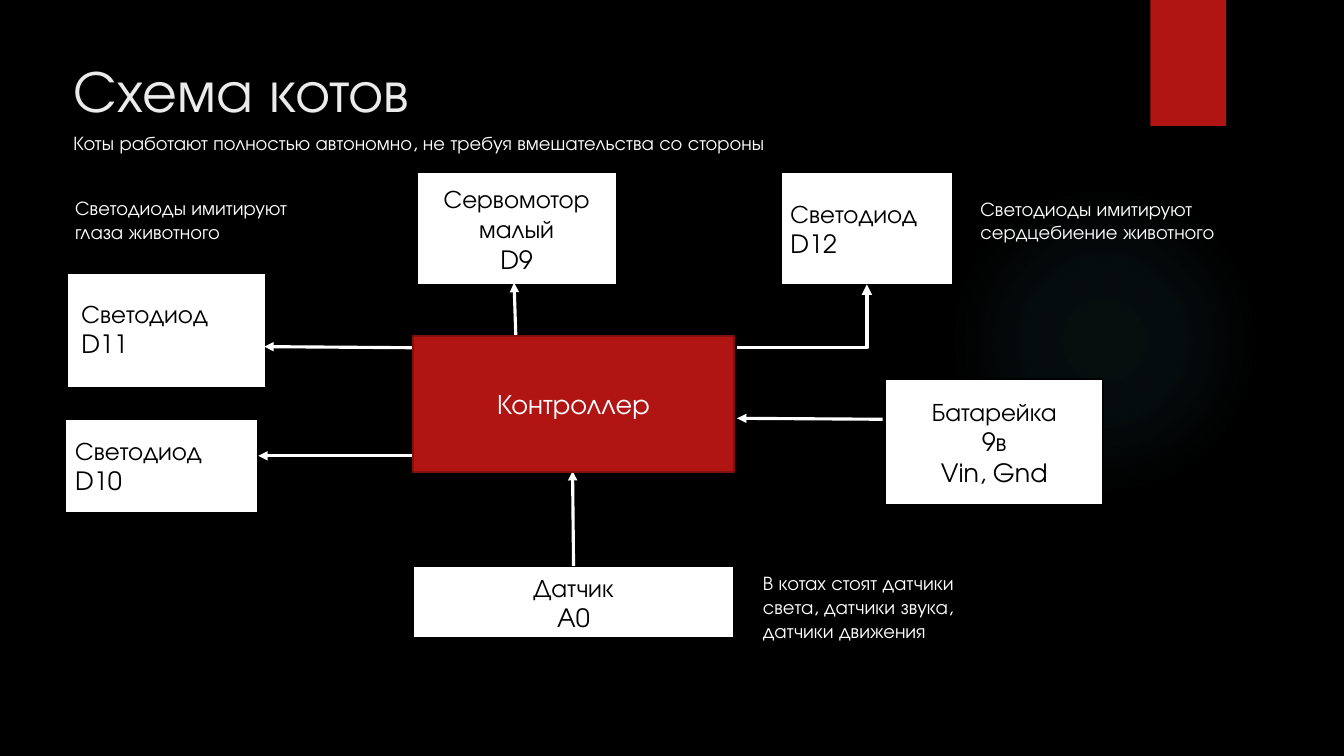
from lxml import etree
from pptx import Presentation
from pptx.dml.color import RGBColor
from pptx.enum.shapes import MSO_CONNECTOR as Link, MSO_SHAPE as Shape
from pptx.enum.text import MSO_ANCHOR as Anchor, PP_ALIGN as Align
from pptx.oxml import parse_xml
from pptx.oxml.ns import nsdecls, qn
from pptx.util import Pt

BLACK = RGBColor(0x00, 0x00, 0x00)
WHITE = RGBColor(0xFF, 0xFF, 0xFF)
TITLE_GRAY = RGBColor(0xEB, 0xEB, 0xEB)
RED = RGBColor(0xB0, 0x15, 0x13)
DARK_RED = RGBColor(0x82, 0x10, 0x0E)
FONT = "TeX Gyre Adventor"

deck = Presentation()
deck.slide_width, deck.slide_height = Pt(960), Pt(540)
page = deck.slides.add_slide(deck.slide_layouts[5])
page.background.fill.solid()
page.background.fill.fore_color.rgb = BLACK


def add_block(kind, place, fill=None, line=None):
    block = page.shapes.add_shape(kind, *[Pt(value) for value in place])
    block.shadow.inherit = False
    if fill is not None:
        block.fill.solid()
        block.fill.fore_color.rgb = fill
    if line is None:
        block.line.fill.background()
    else:
        block.line.color.rgb = line
        block.line.width = Pt(1.5)
    return block


def write(shape, lines, size, color, align=Align.LEFT, anchor=Anchor.TOP):
    frame = shape.text_frame
    frame.word_wrap = True
    frame.vertical_anchor = anchor
    frame.text = "\n".join(lines)
    for para in frame.paragraphs:
        para.alignment = align
        para.font.name = FONT
        para.font.size = Pt(size)
        para.font.color.rgb = color


# Soft glow and red tab
glow = add_block(Shape.OVAL, (677.5, 131.8, 221.8, 221.8))
stops = "".join(
    f'<a:gs pos="{position}"><a:srgbClr val="50B9C1"><a:alpha val="{alpha}"/></a:srgbClr></a:gs>'
    for position, alpha in [(0, 7000), (36000, 6000), (69000, 0), (100000, 0)])
glow_fill = parse_xml(
    f'<a:gradFill {nsdecls("a")}><a:gsLst>{stops}</a:gsLst><a:path path="circle">'
    '<a:fillToRect l="50000" t="50000" r="50000" b="50000"/></a:path></a:gradFill>')
glow.element.spPr.find(qn("a:prstGeom")).addnext(glow_fill)
add_block(Shape.RECTANGLE, (821.8, 0, 54, 90), RED)

# Title
title = page.shapes.title
title.left, title.top, title.width, title.height = Pt(45.4), Pt(34.6), Pt(740.9), Pt(54.7)
write(title, ["Схема котов"], 42, TITLE_GRAY)

# White component boxes
components = [
    ((297.5, 123, 143, 80.8), ["Сервомотор", "малый", "D9"], Align.CENTER),
    ((557.5, 123, 123.5, 80.8), ["Светодиод", "D12"], Align.LEFT),
    ((632.5, 270.6, 155.5, 90), ["Батарейка", "9в", "Vin, Gnd"], Align.CENTER),
    ((295, 404.6, 229.3, 51), ["Датчик", "A0"], Align.CENTER),
    ((46.6, 299, 138, 67.4), ["Светодиод", "D10"], Align.LEFT),
    ((47.8, 195, 142, 82), [], Align.LEFT),
]
for place, lines, align in components:
    box = add_block(Shape.RECTANGLE, place, WHITE, BLACK)
    if lines:
        write(box, lines, 18, BLACK, align, Anchor.MIDDLE)

# Arrows between the board and the components
arrows = [
    (Link.STRAIGHT, (368.6, 244.8, 367.2, 202), 2.25),
    (Link.STRAIGHT, (630.5, 299.5, 526.5, 298.8), 2.25),
    (Link.STRAIGHT, (409.7, 404.2, 409, 336.5), 2.25),
    (Link.STRAIGHT, (297.4, 325.6, 184.5, 325.6), 2.25),
    (Link.STRAIGHT, (297.4, 248.4, 188.8, 247.6), 2.25),
    (Link.ELBOW, (526.3, 248.2, 619.2, 203.2), 2.5),
]
for kind, ends, width in arrows:
    arrow = page.shapes.add_connector(kind, *[Pt(value) for value in ends])
    arrow.line.color.rgb = WHITE
    arrow.line.width = Pt(width)
    properties = arrow.element.spPr
    if kind == Link.ELBOW:
        properties.find(qn("a:prstGeom")).set("prst", "bentConnector2")
    etree.SubElement(properties.find(qn("a:ln")), qn("a:tailEnd"), type="triangle")
    etree.SubElement(properties, qn("a:effectLst"))

# Central board
board = add_block(Shape.RECTANGLE, (295, 239.8, 229.3, 97.2), RED, DARK_RED)
write(board, ["Контроллер"], 20, WHITE, Align.CENTER, Anchor.MIDDLE)

# Captions
captions = [
    ((51, 209.5, 136, 51), ["Светодиод", "D11"], 18, BLACK),
    ((45.4, 90, 818, 24.2),
     ["Коты работают полностью автономно, не требуя вмешательства со стороны"], 14, WHITE),
    ((46.6, 136.4, 189.4, 41.2), ["Светодиоды имитируют глаза животного"], 14, WHITE),
    ((693.2, 136.8, 189.4, 58.2), ["Светодиоды имитируют сердцебиение животного"], 14, WHITE),
    ((537.8, 404.6, 189.4, 58.2),
     ["В котах стоят датчики света, датчики звука, датчики движения"], 14, WHITE),
]
for place, lines, size, color in captions:
    caption = page.shapes.add_textbox(*[Pt(value) for value in place])
    write(caption, lines, size, color)

deck.save("out.pptx")
